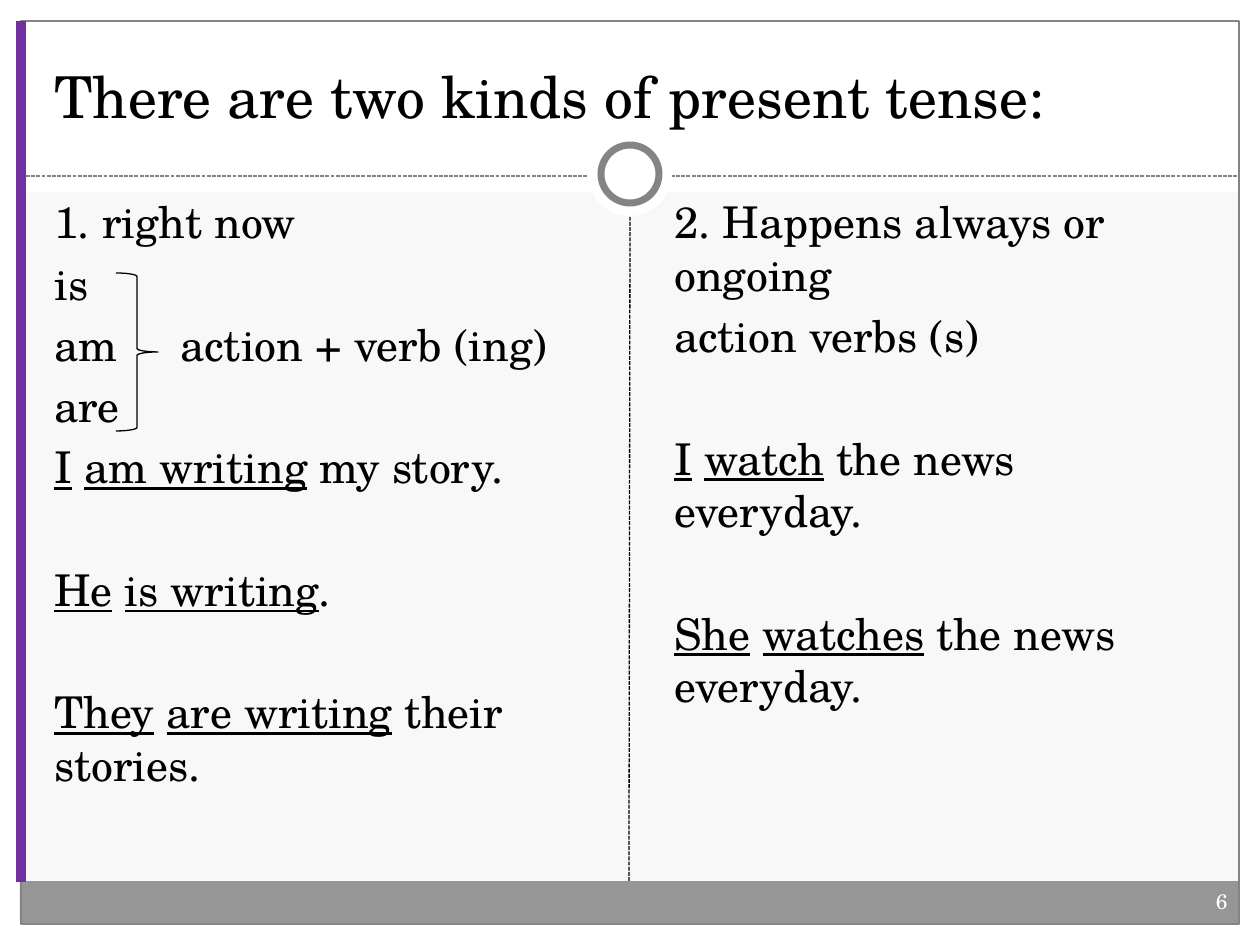
from dataclasses import dataclass
from typing import Optional

from pptx import Presentation
from pptx.dml.color import RGBColor
from pptx.enum.dml import MSO_LINE
from pptx.enum.shapes import MSO_CONNECTOR, MSO_SHAPE
from pptx.enum.text import MSO_ANCHOR, PP_ALIGN
from pptx.oxml.ns import qn
from pptx.slide import Slide
from pptx.util import Emu, Pt
from lxml.etree import SubElement

WIDTH, HEIGHT = 1260, 945
EMU_PER_PX = 914400 / 126
FONT = "TeX Gyre Schola"

WHITE = RGBColor(0xFF, 0xFF, 0xFF)
BLACK = RGBColor(0x00, 0x00, 0x00)
PALE = RGBColor(0xF8, 0xF8, 0xF8)
GRAY = RGBColor(0x96, 0x96, 0x96)
DARK_GRAY = RGBColor(0x84, 0x84, 0x84)
PURPLE = RGBColor(0x70, 0x30, 0xA0)


@dataclass(frozen=True)
class Box:
    left: int
    top: int
    width: int
    height: int

    def emu(self) -> tuple[Emu, ...]:
        return tuple(px(n) for n in (self.left, self.top, self.width, self.height))


@dataclass(frozen=True)
class Figure:
    box: Box
    fill: Optional[RGBColor] = None
    line: Optional[RGBColor] = None
    line_width: float = 0.75
    kind: MSO_SHAPE = MSO_SHAPE.RECTANGLE


@dataclass(frozen=True)
class Rule:
    start: tuple[int, int]
    end: tuple[int, int]
    color: RGBColor
    width: float = 0.75
    dashed: bool = True


@dataclass(frozen=True)
class Entry:
    """A paragraph; words between underscores are underlined."""
    text: str
    space_before: float = 0


@dataclass(frozen=True)
class TextBlock:
    box: Box
    entries: tuple[Entry, ...]
    size: int
    color: RGBColor = BLACK
    align: PP_ALIGN = PP_ALIGN.LEFT
    anchor: MSO_ANCHOR = MSO_ANCHOR.TOP


LINE_GAP = 5
EXAMPLE_GAP = 40

FRAME = (
    Figure(Box(0, 924, WIDTH, 21), WHITE),
    Figure(Box(0, 0, WIDTH, 192), WHITE),
    Figure(Box(0, 0, 21, HEIGHT), WHITE),
    Figure(Box(1239, 0, 21, HEIGHT), WHITE),
    Figure(Box(20, 881, 1218, 43), GRAY),
    Figure(Box(21, 21, 1218, 903), line=DARK_GRAY),
)
TITLE_RULE = Rule((21, 176), (1239, 176), DARK_GRAY)
CIRCLES = (
    Figure(Box(588, 132, 84, 84), WHITE, kind=MSO_SHAPE.OVAL),
    Figure(Box(601, 145, 58, 58), WHITE, DARK_GRAY, 4, MSO_SHAPE.OVAL),
)
COLUMN_RULE = Rule((629, 881), (630, 217), BLACK)
PURPLE_EDGE = Rule((21, 21), (21, 882), PURPLE, 6, dashed=False)
BRACE = Figure(Box(116, 273, 42, 158), line=BLACK, kind=MSO_SHAPE.RIGHT_BRACE)

TEXT_BLOCKS = (
    TextBlock(Box(42, 32, 1176, 104), (Entry("There are two kinds of present tense:"),),
              33, anchor=MSO_ANCHOR.BOTTOM),
    TextBlock(Box(746, 882, 494, 50), (Entry("6"),), 12, WHITE, PP_ALIGN.RIGHT),
    TextBlock(Box(42, 189, 557, 645), (
        Entry("1. right now", LINE_GAP),
        Entry("is", LINE_GAP),
        Entry("am\taction + verb (ing)", LINE_GAP),
        Entry("are", LINE_GAP),
        Entry("_I_ _am writing_ my story.", LINE_GAP),
        Entry("_He_ _is writing_.", EXAMPLE_GAP),
        Entry("_They_ _are writing_ their stories.", EXAMPLE_GAP),
    ), 25),
    TextBlock(Box(662, 189, 557, 645), (
        Entry("2. Happens always or ongoing", LINE_GAP),
        Entry("action verbs (s)", LINE_GAP),
        Entry("_I_ _watch_ the news everyday.", EXAMPLE_GAP),
        Entry("_She_ _watches_ the news everyday.", EXAMPLE_GAP),
    ), 25),
)


def px(length: int) -> Emu:
    return Emu(round(length * EMU_PER_PX))


def draw_figure(slide: Slide, figure: Figure) -> None:
    shape = slide.shapes.add_shape(figure.kind, *figure.box.emu())
    shape.shadow.inherit = False
    if figure.fill is None:
        shape.fill.background()
    else:
        shape.fill.solid()
        shape.fill.fore_color.rgb = figure.fill
    if figure.line is None:
        shape.line.fill.background()
    else:
        shape.line.color.rgb = figure.line
        shape.line.width = Pt(figure.line_width)


def draw_rule(slide: Slide, rule: Rule) -> None:
    ends = (px(n) for n in (*rule.start, *rule.end))
    connector = slide.shapes.add_connector(MSO_CONNECTOR.STRAIGHT, *ends)
    connector.line.color.rgb = rule.color
    connector.line.width = Pt(rule.width)
    if rule.dashed:
        connector.line.dash_style = MSO_LINE.SQUARE_DOT
    SubElement(connector._element.spPr, qn("a:effectLst"))


def draw_text(slide: Slide, block: TextBlock) -> None:
    frame = slide.shapes.add_textbox(*block.box.emu()).text_frame
    frame.word_wrap = True
    frame.vertical_anchor = block.anchor
    for index, entry in enumerate(block.entries):
        paragraph = frame.add_paragraph() if index else frame.paragraphs[0]
        paragraph.alignment = block.align
        paragraph.space_before = Pt(entry.space_before)
        paragraph.font.name = FONT
        paragraph.font.size = Pt(block.size)
        paragraph.font.color.rgb = block.color
        for position, part in enumerate(entry.text.split("_")):
            if part:
                run = paragraph.add_run()
                run.text = part
                if position % 2:
                    run.font.underline = True


def main() -> None:
    presentation = Presentation()
    presentation.slide_width = px(WIDTH)
    presentation.slide_height = px(HEIGHT)
    slide = presentation.slides.add_slide(presentation.slide_layouts[6])
    slide.background.fill.solid()
    slide.background.fill.fore_color.rgb = PALE

    for figure in FRAME:
        draw_figure(slide, figure)
    draw_rule(slide, TITLE_RULE)
    for circle in CIRCLES:
        draw_figure(slide, circle)
    draw_rule(slide, COLUMN_RULE)
    for block in TEXT_BLOCKS:
        draw_text(slide, block)
    draw_rule(slide, PURPLE_EDGE)
    draw_figure(slide, BRACE)

    presentation.save("out.pptx")


if __name__ == "__main__":
    main()
